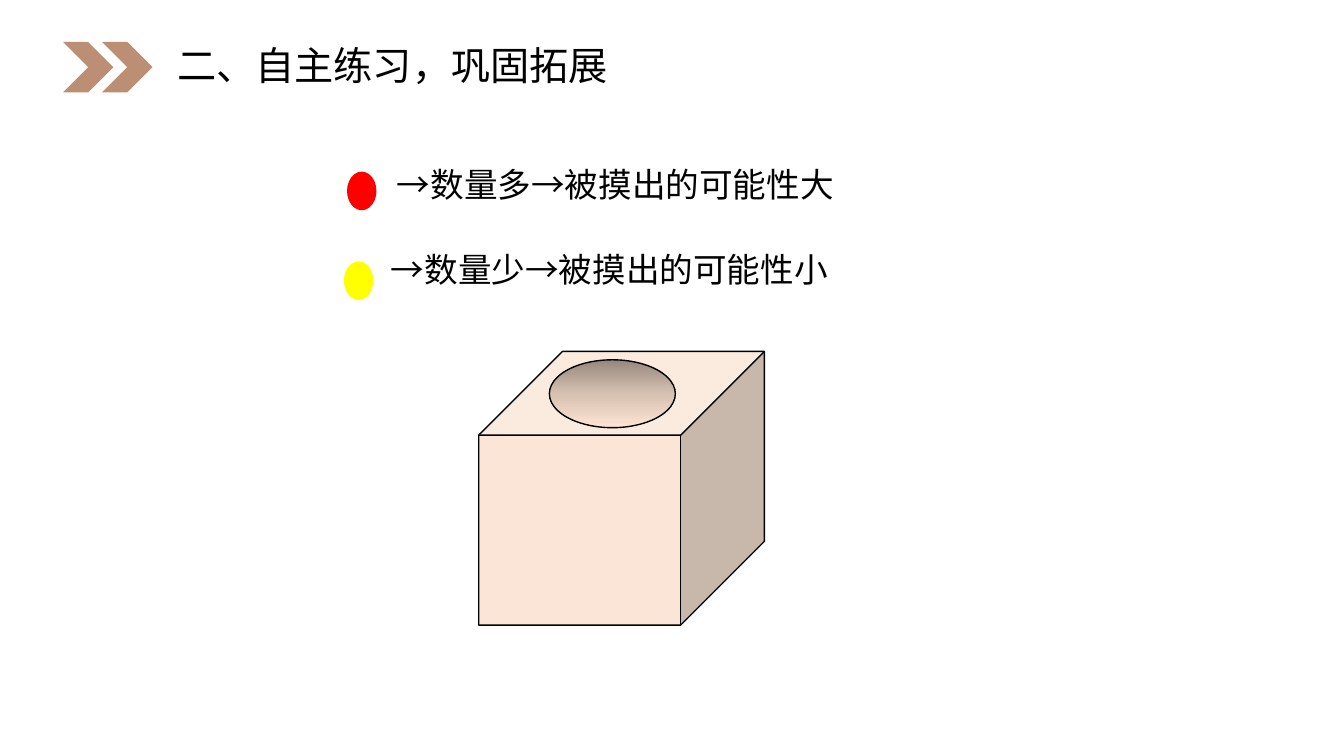
"""Slide on how the number of balls in a box affects the chance of drawing them."""
from copy import deepcopy

from pptx import Presentation
from pptx.dml.color import RGBColor
from pptx.enum import shapes, text
from pptx.util import Pt

BROWN = RGBColor(0xBC, 0x8E, 0x73)
PEACH = RGBColor(0xFB, 0xE5, 0xD6)
HOLE_DARK = RGBColor(0x96, 0x87, 0x7D)
HOLE_MID = RGBColor(0xD6, 0xC1, 0xB2)
HOLE_LIGHT = RGBColor(0xFE, 0xE4, 0xD3)
RED = RGBColor(0xFF, 0x00, 0x00)
YELLOW = RGBColor(0xFF, 0xFF, 0x00)
BLACK = RGBColor(0x00, 0x00, 0x00)

prs = Presentation()
prs.slide_width, prs.slide_height = Pt(960), Pt(540)
slide = prs.slides.add_slide(prs.slide_layouts[6])


def add_figure(kind, left, top, width, height, fill=None, line=None):
    figure = slide.shapes.add_shape(kind, Pt(left), Pt(top), Pt(width), Pt(height))
    figure.shadow.inherit = False
    if fill is not None:
        figure.fill.solid()
        figure.fill.fore_color.rgb = fill
    if line is None:
        figure.line.fill.background()
    else:
        figure.line.color.rgb = line
        figure.line.width = Pt(1)
    return figure


def add_words(words, left, top, width, height, size, spacing, before, after=0,
              anchor=text.MSO_ANCHOR.TOP, fit=text.MSO_AUTO_SIZE.NONE):
    frame = slide.shapes.add_textbox(Pt(left), Pt(top), Pt(width), Pt(height)).text_frame
    frame.word_wrap = True
    frame.auto_size = fit
    frame.vertical_anchor = anchor
    paragraph = frame.paragraphs[0]
    paragraph.line_spacing = spacing
    paragraph.space_before, paragraph.space_after = Pt(before), Pt(after)
    run = paragraph.add_run()
    run.text = words
    run.font.name, run.font.size = "Arial", Pt(size)
    run.font.color.rgb = BLACK


for chevron_left in (45, 73):
    add_figure(shapes.MSO_SHAPE.CHEVRON, chevron_left, 30, 36, 36, BROWN)

box = add_figure(shapes.MSO_SHAPE.CUBE, 342, 251, 204, 195.5, PEACH, BLACK)
box.adjustments[0] = 0.306

hole = add_figure(shapes.MSO_SHAPE.OVAL, 392.4, 257, 90, 48.5, line=BLACK)
hole.fill.gradient()
hole.fill.gradient_angle = 270
first_stop = hole.fill.gradient_stops[0]._gs
first_stop.addnext(deepcopy(first_stop))
hole_shades = zip(hole.fill.gradient_stops, (HOLE_DARK, HOLE_MID, HOLE_LIGHT), (0, 0.5, 1))
for stop, shade, position in hole_shades:
    stop.color.rgb = shade
    stop.position = position

chances = [
    ("→数量多→被摸出的可能性大", 276.5, 108, 248.4, 123.1, RED),
    ("→数量少→被摸出的可能性小", 272.2, 168.5, 246.2, 187.2, YELLOW),
]
for words, words_left, words_top, ball_left, ball_top, colour in chances:
    add_words(words, words_left, words_top, 474, 39.6, 24, 1.2, 5, 5,
              fit=text.MSO_AUTO_SIZE.SHAPE_TO_FIT_TEXT)
    add_figure(shapes.MSO_SHAPE.OVAL, ball_left, ball_top, 20, 26.6, colour, colour)

add_words("二、自主练习，巩固拓展", 119.5, 31.7, 402.5, 33, 28, 0.9, 10,
          anchor=text.MSO_ANCHOR.MIDDLE)

prs.save("out.pptx")
